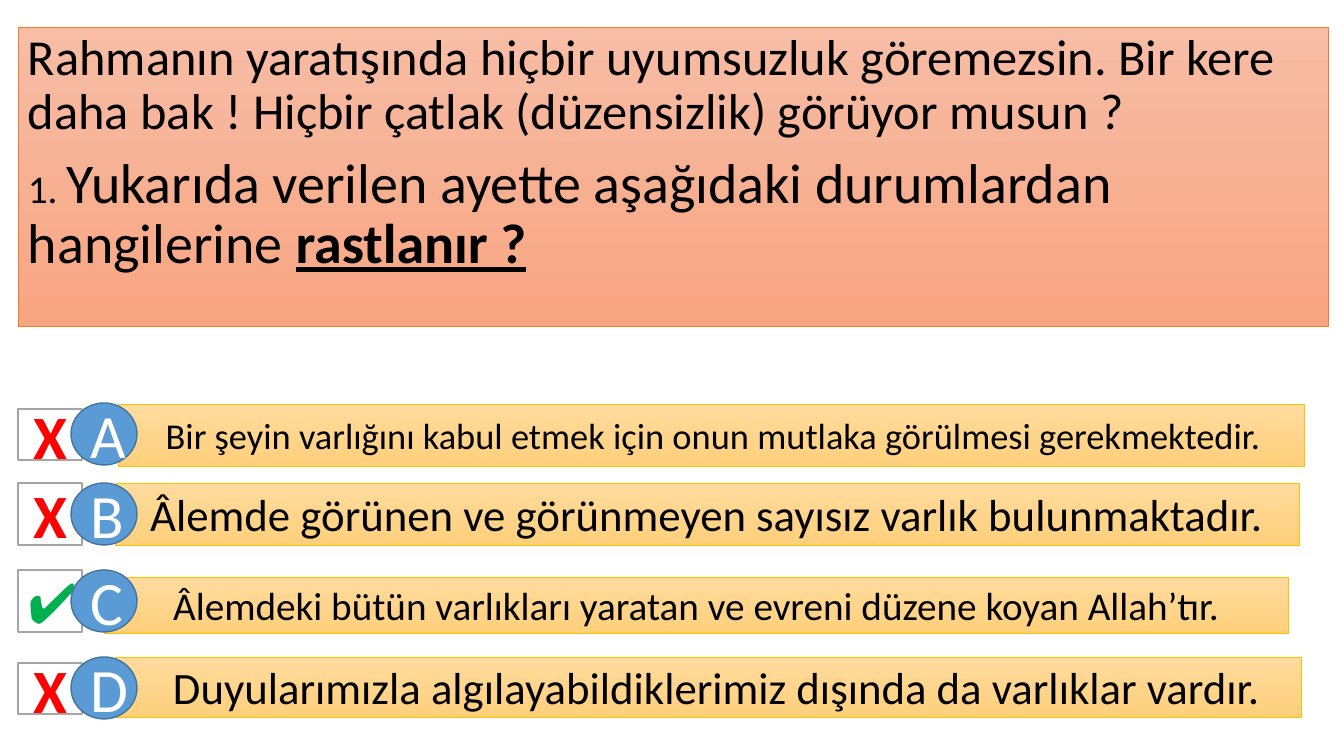
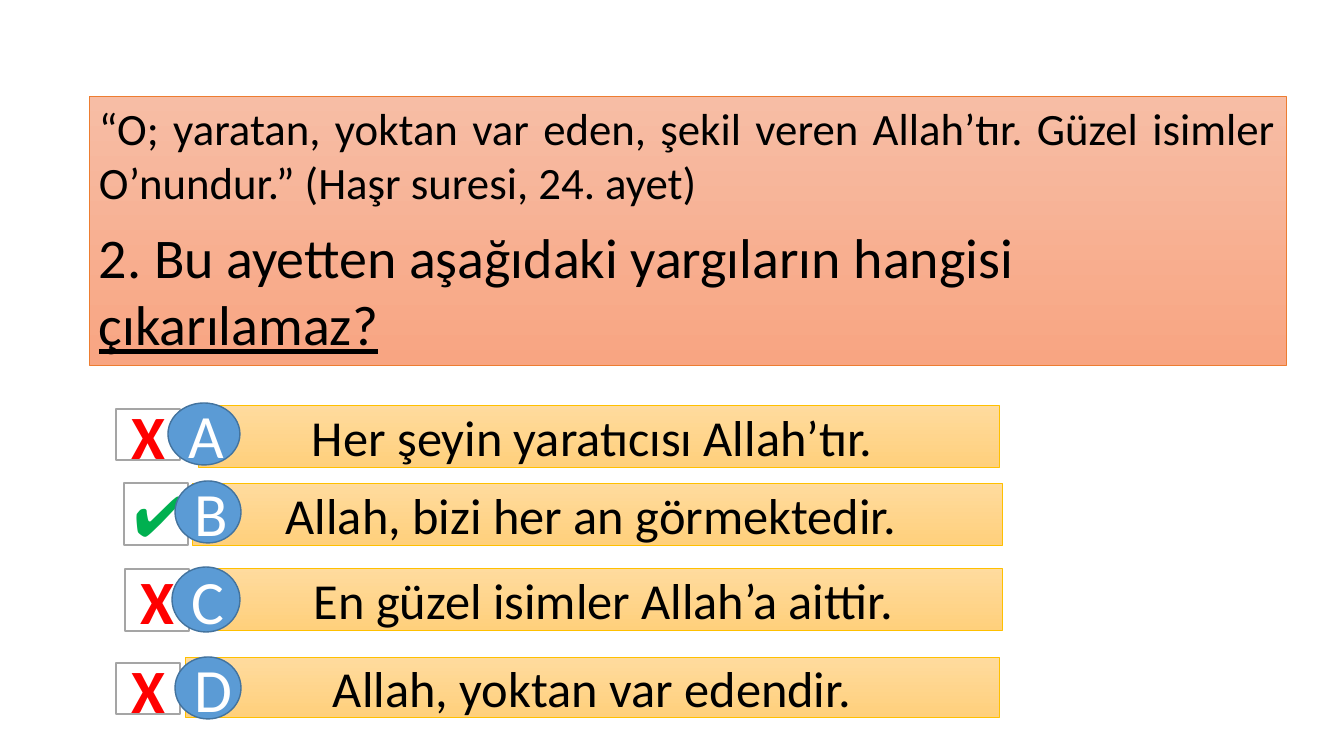
from pptx import Presentation
from pptx.dml.color import RGBColor
from pptx.enum.shapes import MSO_SHAPE
from pptx.enum.text import MSO_ANCHOR, PP_ALIGN
from pptx.util import Emu, Pt

PX = 914400 / 100.8
SLIDE_SIZE = (1344, 756)
FONT = "Calibri"
INSET = 10  # default side inset of a text frame
LETTERS = "ABCD"
COLORS = {
    "black": "000000", "white": "FFFFFF",
    "question_top": "F7BDA5", "question_bottom": "F8A582", "question_line": "ED7D31",
    "answer_top": "FFDB9E", "answer_bottom": "FFD07C", "answer_line": "FFC000",
    "badge": "5B9BD5", "badge_line": "43739E", "mark_line": "A5A5A5",
    "wrong": "FF0000", "right": "00B050",
}

# Boxes are (left, top, width, height) in px.
# Question paragraphs hold runs of (text, format); answers follow in order A to D.
QUIZ = [
    {
        "question_box": (18, 27, 1310, 299),
        "line_spacing": 0.9,
        "question": [
            (PP_ALIGN.LEFT, [
                ("Rahmanın yaratışında hiçbir uyumsuzluk göremezsin. Bir kere daha bak ! "
                 "Hiçbir çatlak (düzensizlik) görüyor musun ?", {"size": 36})]),
            (PP_ALIGN.LEFT, [
                ("1. ", {"size": 28}),
                ("Yukarıda verilen ayette aşağıdaki durumlardan hangilerine ", {"size": 40}),
                ("rastlanır ?", {"size": 40, "bold": True, "underline": True})]),
        ],
        "correct": "C",
        "answers": [
            {"text": "Bir şeyin varlığını kabul etmek için onun mutlaka görülmesi gerekmektedir.",
             "size": 26, "shift": 3, "bar": (118, 404, 1186, 62),
             "mark": (18, 409, 64, 51), "badge": (71, 403, 66, 62)},
            {"text": "Âlemde görünen ve görünmeyen sayısız varlık bulunmaktadır.",
             "size": 32, "shift": 0, "bar": (115, 483, 1184, 62),
             "mark": (18, 483, 64, 62), "badge": (71, 483, 66, 62)},
            {"text": "Âlemdeki bütün varlıkları yaratan ve evreni düzene koyan Allah’tır.",
             "size": 28, "shift": 0, "bar": (104, 577, 1184, 56),
             "mark": (18, 570, 64, 62), "badge": (71, 570, 66, 62)},
            {"text": "Duyularımızla algılayabildiklerimiz dışında da varlıklar vardır.",
             "size": 32, "shift": 9, "bar": (115, 657, 1186, 60),
             "mark": (18, 663, 64, 51), "badge": (71, 657, 66, 62)},
        ],
    },
    {
        "question_box": (89, 96, 1197, 269),
        "line_spacing": 1.0,
        "question": [
            (PP_ALIGN.JUSTIFY, [
                ("“O; yaratan, yoktan var eden, şekil veren Allah’tır. "
                 "Güzel isimler O’nundur.” (Haşr suresi, 24. ayet)", {"size": 32})]),
            (PP_ALIGN.LEFT, [
                ("2. Bu ayetten aşağıdaki yargıların hangisi ", {"size": 40}),
                ("çıkarılamaz?", {"size": 40, "underline": True})]),
        ],
        "correct": "B",
        "answers": [
            {"text": "Her şeyin yaratıcısı Allah’tır.",
             "size": 36, "shift": -6, "bar": (198, 405, 801, 62),
             "mark": (116, 409, 64, 51), "badge": (168, 403, 72, 62)},
            {"text": "Allah, bizi her an görmektedir.",
             "size": 36, "shift": -6, "bar": (192, 483, 810, 62),
             "mark": (124, 483, 64, 62), "badge": (175, 481, 66, 62)},
            {"text": "En güzel isimler Allah’a aittir.",
             "size": 36, "shift": 0, "bar": (205, 568, 797, 62),
             "mark": (125, 569, 64, 62), "badge": (172, 567, 68, 65)},
            {"text": "Allah, yoktan var edendir.",
             "size": 36, "shift": 0, "bar": (185, 657, 814, 60),
             "mark": (116, 663, 64, 51), "badge": (175, 657, 66, 62)},
        ],
    },
]


def px(value):
    return Emu(round(value * PX))


def rgb(name):
    return RGBColor.from_string(COLORS[name])


def add_box(slide, box, fills, line, line_width, kind=MSO_SHAPE.RECTANGLE):
    """Add a shape; two fills make a gradient from top to bottom."""
    shape = slide.shapes.add_shape(kind, *(px(value) for value in box))
    shape.shadow.inherit = False
    if len(fills) == 2:
        shape.fill.gradient()
        shape.fill.gradient_angle = 270
        for stop, name in zip(shape.fill.gradient_stops, fills):
            stop.color.rgb = rgb(name)
    else:
        shape.fill.solid()
        shape.fill.fore_color.rgb = rgb(fills[0])
    shape.line.color.rgb = rgb(line)
    shape.line.width = Pt(line_width)
    shape.text_frame.word_wrap = True
    return shape


def add_text(paragraph, text, size, color="black", bold=False, underline=False,
             align=PP_ALIGN.CENTER):
    paragraph.alignment = align
    run = paragraph.add_run()
    run.text = text
    font = run.font
    font.name = FONT
    font.size = Pt(size)
    font.bold = bold
    font.underline = underline
    font.color.rgb = rgb(color)


def add_question(slide, quiz):
    shape = add_box(slide, quiz["question_box"], ("question_top", "question_bottom"),
                    "question_line", 0.5)
    frame = shape.text_frame
    frame.vertical_anchor = MSO_ANCHOR.TOP
    for index, (align, runs) in enumerate(quiz["question"]):
        paragraph = frame.add_paragraph() if index else frame.paragraphs[0]
        paragraph.line_spacing = quiz["line_spacing"]
        paragraph.space_before = Pt(10 if index else 0)
        for text, style in runs:
            add_text(paragraph, text, align=align, **style)


def add_answer(slide, letter, answer, correct):
    # Mark: right or wrong
    mark = add_box(slide, answer["mark"], ("white",), "mark_line", 1)
    if correct:
        add_text(mark.text_frame.paragraphs[0], "✔", 40, color="right")
    else:
        add_text(mark.text_frame.paragraphs[0], "X", 44, color="wrong", bold=True)

    # Answer bar, its text moved sideways by the insets
    bar = add_box(slide, answer["bar"], ("answer_top", "answer_bottom"), "answer_line", 0.5)
    shift = answer["shift"]
    bar.text_frame.margin_left = px(INSET + max(2 * shift, 0))
    bar.text_frame.margin_right = px(INSET + max(-2 * shift, 0))
    add_text(bar.text_frame.paragraphs[0], answer["text"], answer["size"])

    # Letter badge
    badge = add_box(slide, answer["badge"], ("badge",), "badge_line", 1, kind=MSO_SHAPE.OVAL)
    add_text(badge.text_frame.paragraphs[0], letter, 44, color="white")


def main():
    presentation = Presentation()
    presentation.slide_width, presentation.slide_height = (px(side) for side in SLIDE_SIZE)
    for quiz in QUIZ:
        slide = presentation.slides.add_slide(presentation.slide_layouts[6])
        add_question(slide, quiz)
        for letter, answer in zip(LETTERS, quiz["answers"]):
            add_answer(slide, letter, answer, letter == quiz["correct"])
    presentation.save("out.pptx")


if __name__ == "__main__":
    main()
